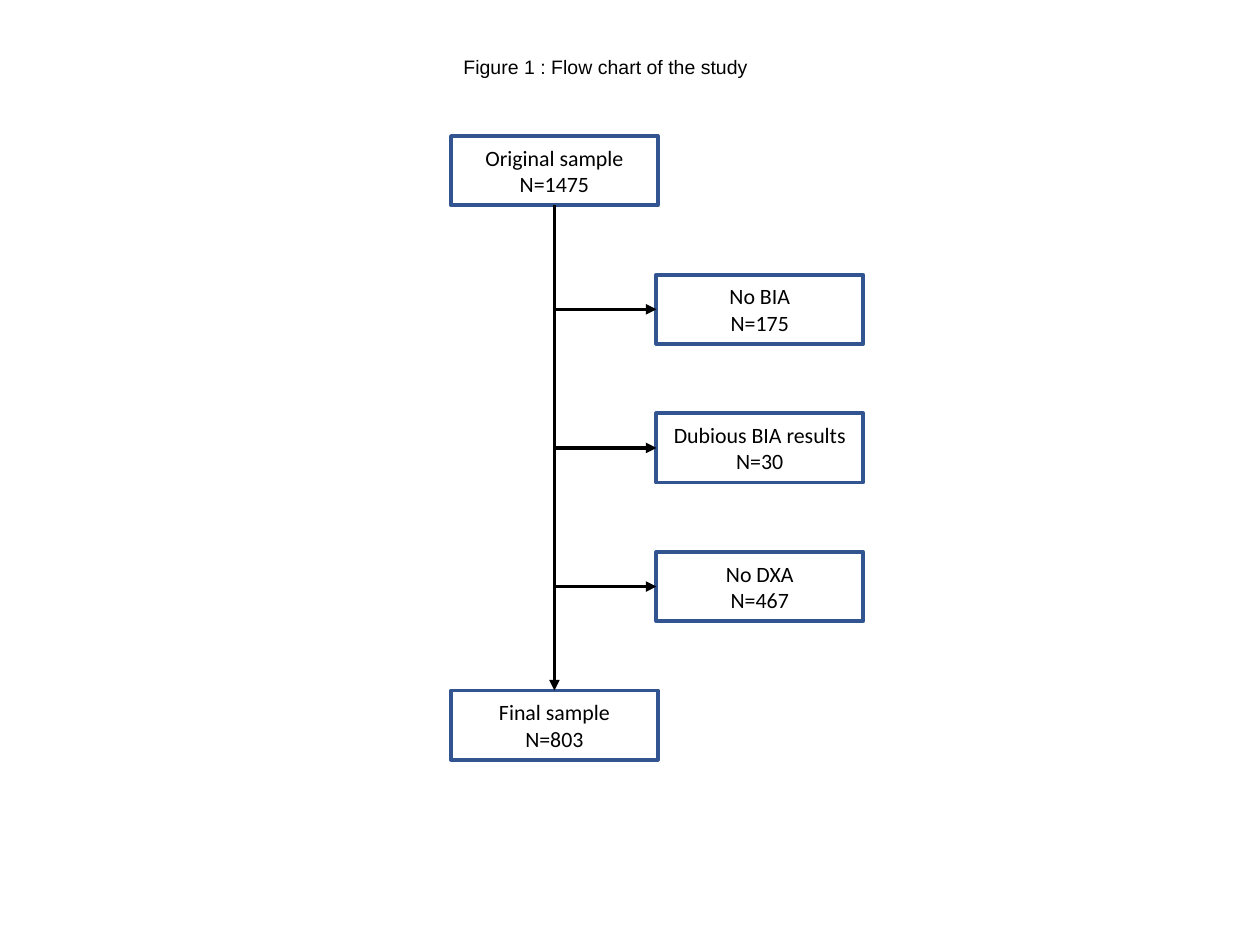
from lxml.etree import SubElement
from pptx import Presentation
from pptx.dml.color import RGBColor
from pptx.enum.shapes import MSO_CONNECTOR as LINK, MSO_SHAPE as SHAPE
from pptx.enum.text import MSO_ANCHOR as ANCHOR, MSO_AUTO_SIZE as FIT, PP_ALIGN as ALIGN
from pptx.oxml.ns import qn
from pptx.util import Inches, Pt

BLACK = RGBColor(0x00, 0x00, 0x00)
WHITE = RGBColor(0xFF, 0xFF, 0xFF)
BLUE = RGBColor(0x32, 0x54, 0x91)

LEFT, TOP = Inches(3.58), Inches(1.08)
COLUMN_STEP, ROW_STEP = Inches(1.63), Inches(1.1)
BOX_WIDTH, BOX_HEIGHT = Inches(1.64), Inches(0.55)
BOTTOM_SIDE, LEFT_SIDE, TOP_SIDE = 2, 1, 0

STEPS = [
    ("Original sample", 1475, 0),
    ("No BIA", 175, 1),
    ("Dubious BIA results", 30, 1),
    ("No DXA", 467, 1),
    ("Final sample", 803, 0),
]


def style_text(frame, font_name, size, align):
    for paragraph in frame.paragraphs:
        paragraph.alignment = align
        for run in paragraph.runs:
            run.font.name = font_name
            run.font.size = Pt(size)
            run.font.color.rgb = BLACK


def add_title(slide, text):
    title = slide.shapes.add_textbox(LEFT, Inches(0.39), Inches(2.47), Inches(0.29))
    frame = title.text_frame
    frame.word_wrap = False
    frame.auto_size = FIT.SHAPE_TO_FIT_TEXT
    frame.text = text
    style_text(frame, "Arial", 11.1, ALIGN.LEFT)


def add_step(slide, label, count, column, row):
    step = slide.shapes.add_shape(
        SHAPE.RECTANGLE,
        LEFT + column * COLUMN_STEP, TOP + row * ROW_STEP,
        BOX_WIDTH, BOX_HEIGHT)
    step.shadow.inherit = False
    step.fill.solid()
    step.fill.fore_color.rgb = WHITE
    step.line.color.rgb = BLUE
    step.line.width = Pt(2.25)
    frame = step.text_frame
    frame.word_wrap = True
    frame.vertical_anchor = ANCHOR.MIDDLE
    frame.text = f"{label}\nN={count}"
    style_text(frame, "Calibri", 12.5, ALIGN.CENTER)
    return step


def add_arrow(slide, kind, source, target, target_side):
    arrow = slide.shapes.add_connector(kind, 0, 0, 0, 0)
    arrow.begin_connect(source, BOTTOM_SIDE)
    arrow.end_connect(target, target_side)
    arrow.line.color.rgb = BLACK
    arrow.line.width = Pt(2)
    properties = arrow._element.spPr
    SubElement(properties.find(qn("a:ln")), qn("a:tailEnd"), type="triangle")
    SubElement(properties, qn("a:effectLst"))
    return arrow


def add_branch(slide, source, target):
    branch = add_arrow(slide, LINK.ELBOW, source, target, LEFT_SIDE)
    run, drop = branch.width, branch.height
    middle_x = branch.left + run // 2
    middle_y = branch.top + drop // 2
    branch.left, branch.top = middle_x - drop // 2, middle_y - run // 2
    branch.width, branch.height = drop, run
    branch.rotation = 270
    properties = branch._element.spPr
    properties.find(qn("a:xfrm")).set("flipH", "1")
    properties.find(qn("a:prstGeom")).set("prst", "bentConnector2")


def main():
    deck = Presentation()
    deck.slide_width, deck.slide_height = Inches(10), Inches(7.5)
    slide = deck.slides.add_slide(deck.slide_layouts[6])
    original, *exclusions, final = [
        add_step(slide, label, count, column, row)
        for row, (label, count, column) in enumerate(STEPS)]
    for exclusion in exclusions:
        add_branch(slide, original, exclusion)
    add_arrow(slide, LINK.STRAIGHT, original, final, TOP_SIDE)
    add_title(slide, "Figure 1 : Flow chart of the study")
    deck.save("out.pptx")


if __name__ == "__main__":
    main()
